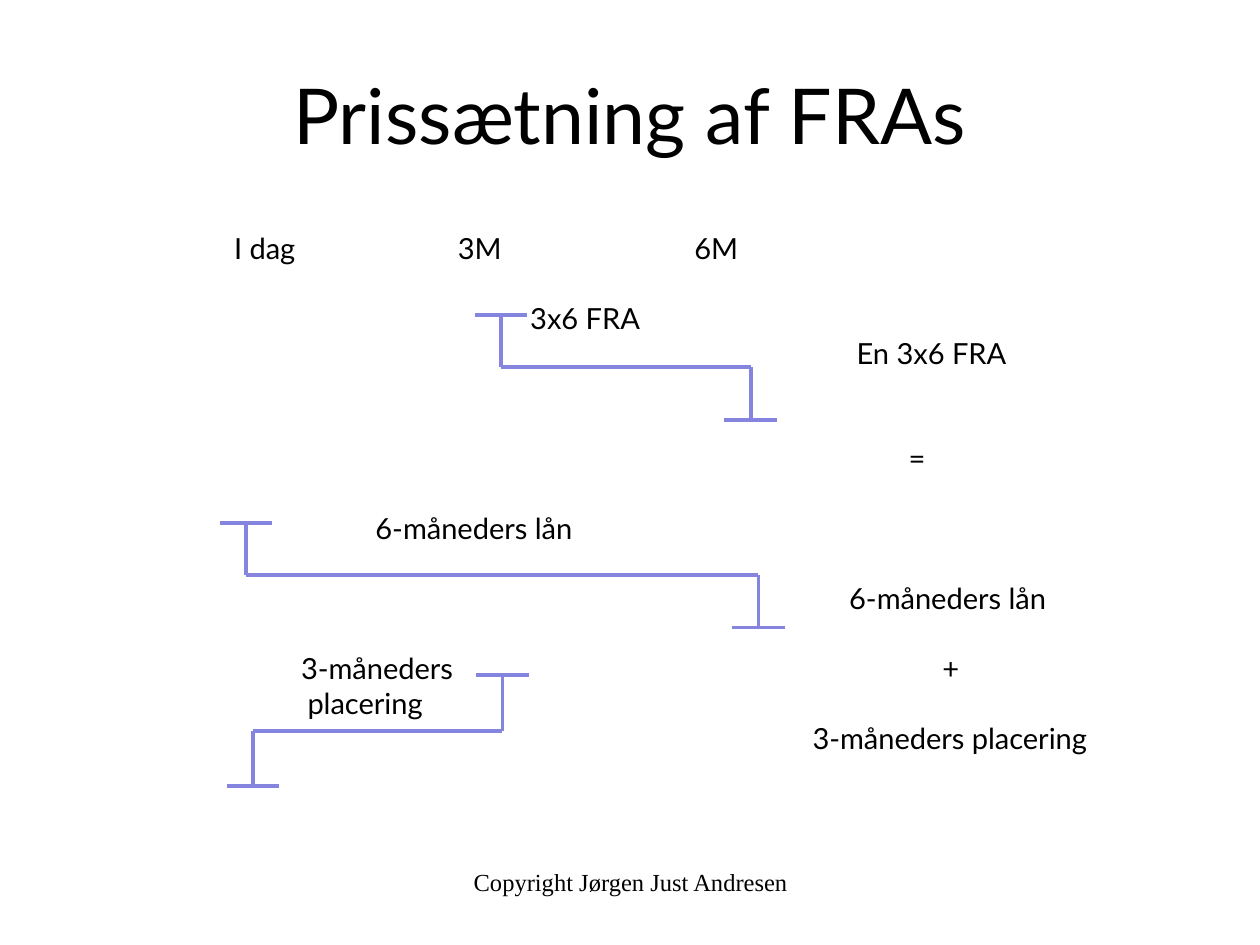
from dataclasses import dataclass

import pptx
import pptx.dml.color
import pptx.enum.shapes
import pptx.enum.text
import pptx.oxml.ns
import pptx.util
from lxml import etree

Cm = pptx.util.Cm
ALIGN = pptx.enum.text.PP_ALIGN
ANCHOR = pptx.enum.text.MSO_ANCHOR


@dataclass(frozen=True)
class Theme:
    ink: str = "000000"
    background: str = "FFFFFF"
    step: str = "8585E0"
    font: str = "Lato"
    footer_font: str = "Times New Roman"
    title_size: float = 44
    body_size: float = 16.6
    footer_size: float = 14
    step_width: float = 2.25


THEME = Theme()
ROW_HEIGHT = 0.706
BAR_LENGTH = 1.05

# Row number, left edge within the table of labels (cm), wording
LABELS = [
    (0, 0, "I dag"), (0, 4.51, "3M"), (0, 9.28, "6M"),
    (2, 5.97, "3x6 FRA"),
    (3, 12.55, "En 3x6 FRA"),
    (6, 13.6, "="),
    (8, 2.85, "6-måneders lån"),
    (10, 12.4, "6-måneders lån"),
    (12, 1.35, "3-måneders"), (12, 14.28, "+"),
    (13, 1.48, "placering"),
    (14, 11.66, "3-måneders placering"),
]


def rgb(value):
    return pptx.dml.color.RGBColor.from_string(value)


def write(frame, text, *, size=THEME.body_size, font=THEME.font,
          align=ALIGN.LEFT, anchor=ANCHOR.TOP, wrap=True):
    """Fill a text frame with one formatted paragraph."""
    frame.word_wrap = wrap
    frame.vertical_anchor = anchor
    frame.margin_left = frame.margin_right = 0
    frame.margin_top = frame.margin_bottom = 0
    paragraph = frame.paragraphs[0]
    paragraph.alignment = align
    run = paragraph.add_run()
    run.text = text
    run.font.size = pptx.util.Pt(size)
    run.font.name = font
    run.font.color.rgb = rgb(THEME.ink)


def add_title(slide, left, top, width, height):
    title = slide.shapes.title
    title.left, title.top = Cm(left), Cm(top)
    title.width, title.height = Cm(width), Cm(height)
    write(title.text_frame, "Prissætning af FRAs", size=THEME.title_size,
          align=ALIGN.CENTER, anchor=ANCHOR.MIDDLE)


def add_labels(slide, left, top):
    for row, offset, wording in LABELS:
        label = slide.shapes.add_textbox(
            Cm(left + offset), Cm(top + row * ROW_HEIGHT), Cm(6), Cm(ROW_HEIGHT))
        write(label.text_frame, wording, wrap=False)


def add_line(slide, x1, y1, x2, y2):
    line = slide.shapes.add_connector(
        pptx.enum.shapes.MSO_CONNECTOR.STRAIGHT, Cm(x1), Cm(y1), Cm(x2), Cm(y2))
    line.line.color.rgb = rgb(THEME.step)
    line.line.width = pptx.util.Pt(THEME.step_width)
    properties = line._element.spPr
    etree.SubElement(properties, pptx.oxml.ns.qn("a:effectLst"))


def add_cash_flow_step(slide, left, top, width, height, rising=False):
    """Draw a level line with a barred stem at each end, one up and one down."""
    right, bottom, middle = left + width, top + height, top + height / 2
    start, end = (bottom, top) if rising else (top, bottom)
    add_line(slide, left, middle, right, middle)
    for x, y in ((left, start), (right, end)):
        add_line(slide, x, middle, x, y)
        add_line(slide, x - BAR_LENGTH / 2, y, x + BAR_LENGTH / 2, y)


def add_footer(slide, left, top, width, height):
    footer = slide.shapes.add_textbox(Cm(left), Cm(top), Cm(width), Cm(height))
    write(footer.text_frame, "Copyright Jørgen Just Andresen",
          size=THEME.footer_size, font=THEME.footer_font, align=ALIGN.CENTER)


def main():
    deck = pptx.Presentation()
    deck.slide_width, deck.slide_height = Cm(25.4), Cm(19.05)
    slide = deck.slides.add_slide(deck.slide_layouts.get_by_name("Title Only"))
    slide.background.fill.solid()
    slide.background.fill.fore_color.rgb = rgb(THEME.background)

    add_title(slide, 1.9, 0.71, 21.6, 3.18)
    add_cash_flow_step(slide, 10.1, 6.35, 5.03, 2.11)
    add_cash_flow_step(slide, 4.95, 10.54, 10.34, 2.11)
    add_cash_flow_step(slide, 5.1, 13.61, 5.03, 2.24, rising=True)
    add_labels(slide, 4.72, 4.65)
    add_footer(slide, 8.69, 17.48, 8.05, 1.14)
    deck.save("out.pptx")


if __name__ == "__main__":
    main()
